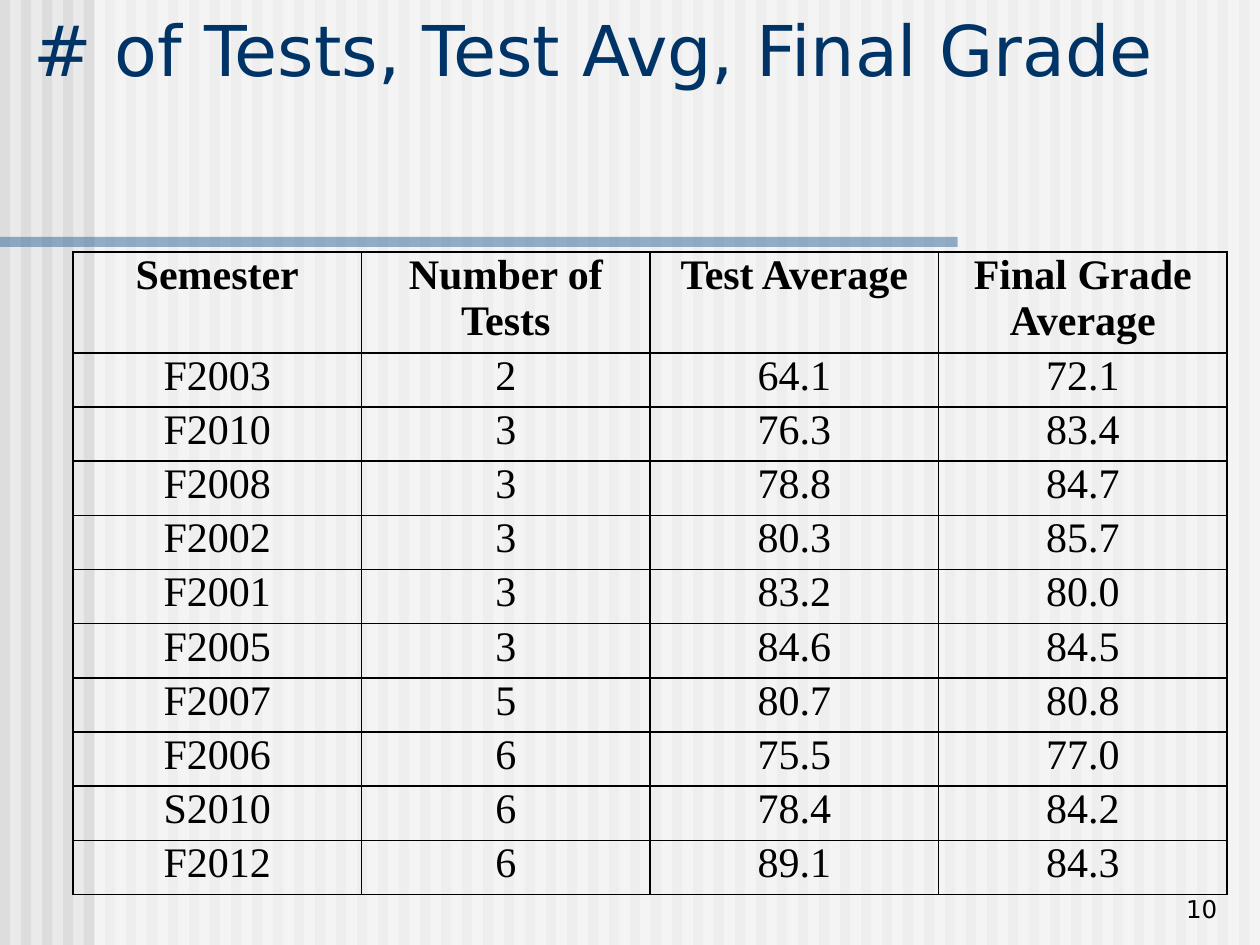
from lxml import etree
from pptx import Presentation
from pptx.dml.color import RGBColor
from pptx.enum.shapes import MSO_SHAPE
from pptx.enum.text import MSO_ANCHOR, PP_ALIGN
from pptx.oxml.ns import qn
from pptx.util import Inches, Pt

RECT = MSO_SHAPE.RECTANGLE
TOP, BOTTOM = MSO_ANCHOR.TOP, MSO_ANCHOR.BOTTOM
LEFT, CENTER, RIGHT = PP_ALIGN.LEFT, PP_ALIGN.CENTER, PP_ALIGN.RIGHT

TITLE = "# of Tests, Test Avg, Final Grade"
PAGE = "10"
HEADER = ("Semester", "Number of Tests", "Test Average", "Final Grade Average")
GRADES = [
    ("F2003", "2", "64.1", "72.1"),
    ("F2010", "3", "76.3", "83.4"),
    ("F2008", "3", "78.8", "84.7"),
    ("F2002", "3", "80.3", "85.7"),
    ("F2001", "3", "83.2", "80.0"),
    ("F2005", "3", "84.6", "84.5"),
    ("F2007", "5", "80.7", "80.8"),
    ("F2006", "6", "75.5", "77.0"),
    ("S2010", "6", "78.4", "84.2"),
    ("F2012", "6", "89.1", "84.3"),
]

THEME = {
    "background": "EAEAEA",
    "stripe": "DDDDDD",
    "veil": "FFFFFF",
    "rule": "336699",
    "border": "000000",
    "title": {"name": "DejaVu Sans", "size": 40, "color": "003366", "bold": False},
    "page": {"name": "DejaVu Sans", "size": 14, "color": "000000", "bold": False},
    "header": {"name": "Times New Roman", "size": 24, "color": "000000", "bold": True},
    "body": {"name": "Times New Roman", "size": 24, "color": "000000", "bold": False},
}

STRIPES, STRIPES_PER_INCH, STRIPE_W = 60, 6, 0.08
HEADER_H, ROW_H, COL_W = 0.74, 0.43, 2.29


def rgb(value):
    return RGBColor.from_string(value)


def add_bar(shapes, box, color, opacity=100):
    sp = shapes.add_shape(RECT, *map(Inches, box))
    sp.shadow.inherit = False
    sp.fill.solid()
    sp.fill.fore_color.rgb = rgb(color)
    sp.line.fill.background()
    if opacity < 100:
        clr = sp.fill._xPr.find(".//" + qn("a:srgbClr"))
        etree.SubElement(clr, qn("a:alpha"), val=str(opacity * 1000))


def write(tf, text, style, align):
    p = tf.paragraphs[0]
    p.alignment = align
    r = p.add_run()
    r.text = text
    font = {**style, "size": Pt(style["size"])}
    r.font.color.rgb = rgb(font.pop("color"))
    for key, value in font.items():
        setattr(r.font, key, value)


def add_text(shapes, box, text, style, align, anchor):
    tf = shapes.add_textbox(*map(Inches, box)).text_frame
    tf.word_wrap = True
    tf.vertical_anchor = anchor
    write(tf, text, style, align)


def add_borders(cell):
    tc_pr = cell._tc.get_or_add_tcPr()
    for i, side in enumerate(("lnL", "lnR", "lnT", "lnB")):
        ln = etree.Element(qn("a:" + side), w=str(Pt(1)))
        fill = etree.SubElement(ln, qn("a:solidFill"))
        etree.SubElement(fill, qn("a:srgbClr"), val=THEME["border"])
        tc_pr.insert(i, ln)


def add_grades(shapes):
    rows = [HEADER] + GRADES
    heights = [HEADER_H] + [ROW_H] * len(GRADES)
    box = (0.58, 2, COL_W * len(HEADER), sum(heights))
    table = shapes.add_table(len(rows), len(HEADER), *map(Inches, box)).table
    table.first_row = table.horz_banding = False
    for col in table.columns:
        col.width = Inches(COL_W)
    margins = {"margin_left": 0.07, "margin_right": 0.07,
               "margin_top": 0, "margin_bottom": 0}
    for i, (values, height) in enumerate(zip(rows, heights)):
        table.rows[i].height = Inches(height)
        style = THEME["body" if i else "header"]
        for j, value in enumerate(values):
            cell = table.cell(i, j)
            for key, margin in margins.items():
                setattr(cell, key, Inches(margin))
            cell.fill.background()
            add_borders(cell)
            write(cell.text_frame, value, style, CENTER)


def main():
    prs = Presentation()
    prs.slide_width, prs.slide_height = Inches(10), Inches(7.5)
    s = prs.slides.add_slide(prs.slide_layouts[6])
    s.background.fill.solid()
    s.background.fill.fore_color.rgb = rgb(THEME["background"])

    stripes = s.shapes.add_group_shape().shapes
    for i in range(STRIPES):
        add_bar(stripes, (i / STRIPES_PER_INCH, 0, STRIPE_W, 7.5), THEME["stripe"])
    add_bar(s.shapes, (0.75, 0, 9.25, 7.5), THEME["veil"], 50)
    add_bar(s.shapes, (0, 1.88, 7.6, 0.08), THEME["rule"], 50)

    add_text(s.shapes, (0.17, 0, 9.67, 0.77), TITLE, THEME["title"], LEFT, TOP)
    add_text(s.shapes, (7.68, 6.88, 2.08, 0.5), PAGE, THEME["page"], RIGHT, BOTTOM)
    add_grades(s.shapes)
    prs.save("out.pptx")


if __name__ == "__main__":
    main()
